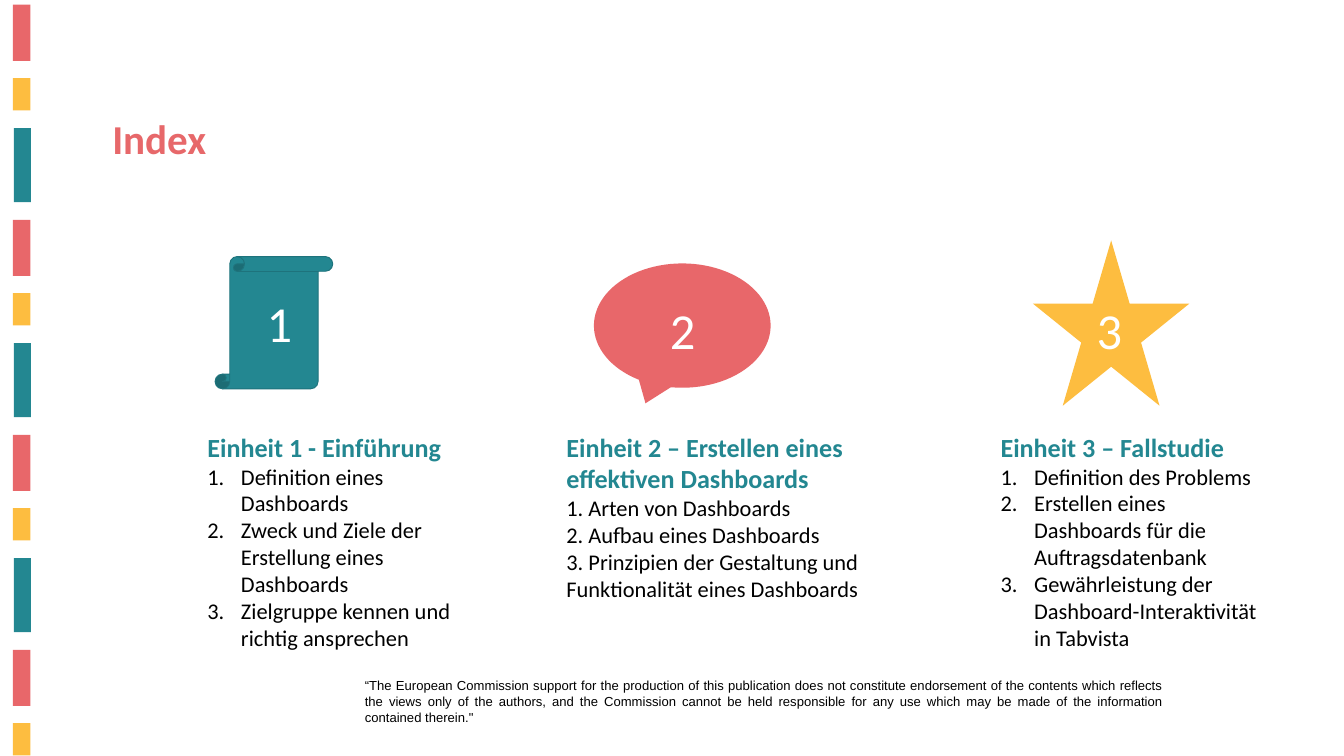
from lxml import etree
from pptx import Presentation
from pptx.dml.color import RGBColor
from pptx.enum.shapes import MSO_SHAPE
from pptx.enum.text import MSO_ANCHOR, MSO_AUTO_SIZE, PP_ALIGN
from pptx.oxml.ns import qn
from pptx.util import Cm, Pt

RECT = MSO_SHAPE.RECTANGLE
SCROLL = MSO_SHAPE.VERTICAL_SCROLL
BUBBLE = MSO_SHAPE.OVAL_CALLOUT
STAR = MSO_SHAPE.STAR_5_POINT
TOP = MSO_ANCHOR.TOP
FIXED = MSO_AUTO_SIZE.NONE
LEFT, JUSTIFY = PP_ALIGN.LEFT, PP_ALIGN.JUSTIFY

COLORS = {
    "red": "E8676A",
    "title": "E7686A",
    "yellow": "FDBD40",
    "teal": "238791",
    "edge": "1E737C",
    "black": "000000",
    "white": "FFFFFF",
}

# Side bars, repeated down the edge: color, left, top, width, height in cm
BARS = [
    ("red", 0.49, 0.18, 0.66, 2.12),
    ("yellow", 0.49, 2.95, 0.66, 1.22),
    ("teal", 0.53, 4.84, 0.64, 2.8),
]
STEP = 8.13
BAR_COUNT = 11

# Icons: kind, fill, line, box, number, number box
ICONS = [
    (SCROLL, "teal", "edge", (8.13, 9.7, 4.45, 5), "1", (9.83, 10.92, 4.01, 2.57)),
    (BUBBLE, "red", None, (22.45, 9.96, 6.68, 4.7), "2", (25.07, 11.2, 2.74, 2.57)),
    (STAR, "yellow", None, (39.04, 9.09, 5.92, 6.25), "3", (41.2, 11.2, 3.81, 2.57)),
]

# Units: box, heading, points, automatic numbers
UNITS = [
    ((7.59, 16.18, 10.92, 9.83), "Einheit 1 - Einführung", [
        "Definition eines Dashboards",
        "Zweck und Ziele der Erstellung eines Dashboards",
        "Zielgruppe kennen und richtig ansprechen",
    ], True),
    ((21.16, 16.18, 12.9, 6.76), "Einheit 2 – Erstellen eines effektiven Dashboards", [
        "1. Arten von Dashboards",
        "2. Aufbau eines Dashboards",
        "3. Prinzipien der Gestaltung und Funktionalität eines Dashboards",
    ], False),
    ((37.57, 16.18, 10.92, 8.64), "Einheit 3 – Fallstudie", [
        "Definition des Problems",
        "Erstellen eines Dashboards für die Auftragsdatenbank",
        "Gewährleistung der Dashboard-Interaktivität in Tabvista",
    ], True),
]

NOTICE = (
    "“The European Commission support for the production of this publication "
    "does not constitute endorsement of the contents which reflects the views "
    "only of the authors, and the Commission cannot be held responsible for any "
    "use which may be made of the information contained therein.\""
)


def color(name):
    return RGBColor.from_string(COLORS[name])


def style(para, size, tint, bold=False, face="Calibri", align=LEFT):
    para.alignment = align
    for run in para.runs:
        font = run.font
        font.name, font.size, font.bold = face, Pt(size), bold
        font.color.rgb = color(tint)


def add_shape(slide, kind, box, fill, line=None):
    shape = slide.shapes.add_shape(kind, *map(Cm, box))
    shape.shadow.inherit = False
    shape.fill.solid()
    shape.fill.fore_color.rgb = color(fill)
    if line:
        shape.line.color.rgb = color(line)
        shape.line.width = Pt(1)
    else:
        shape.line.fill.background()


def add_text(slide, box, text, size, tint, **look):
    frame = slide.shapes.add_textbox(*map(Cm, box)).text_frame
    frame.word_wrap = True
    frame.text = text
    style(frame.paragraphs[0], size, tint, **look)
    return frame


def number(para):
    props = para._p.get_or_add_pPr()
    props.set("marL", str(Cm(1.27)))
    props.set("indent", str(Cm(-1.27)))
    tint = etree.SubElement(props, qn("a:buClr"))
    etree.SubElement(tint, qn("a:srgbClr"), val=COLORS["black"])
    etree.SubElement(props, qn("a:buFont"), typeface="+mj-lt")
    etree.SubElement(props, qn("a:buAutoNum"), type="arabicPeriod")


def add_unit(slide, box, head, points, auto):
    frame = add_text(slide, box, head, 28, "teal", bold=True)
    for point in points:
        para = frame.add_paragraph()
        para.text = point
        if auto:
            number(para)
        style(para, 24, "black")


def add_bars(slide):
    for i in range(BAR_COUNT):
        turn, kind = divmod(i, len(BARS))
        fill, left, top, width, height = BARS[kind]
        add_shape(slide, RECT, (left, top + turn * STEP, width, height), fill)


def set_title(slide, text):
    title = slide.shapes.title
    title.left, title.top = Cm(3.99), Cm(4.17)
    title.width, title.height = Cm(17.2), Cm(2.13)
    frame = title.text_frame
    frame.text = text
    frame.word_wrap = True
    frame.auto_size = FIXED
    frame.vertical_anchor = TOP
    style(frame.paragraphs[0], 44, "title", bold=True)


def main():
    deck = Presentation()
    deck.slide_width, deck.slide_height = Cm(50.8), Cm(28.58)
    slide = deck.slides.add_slide(deck.slide_layouts[5])

    # Frame of the page
    add_bars(slide)
    add_text(slide, (13.54, 25.5, 30.68, 2.06), NOTICE, 14, "black",
             face="Arial", align=JUSTIFY)
    set_title(slide, "Index")

    # Numbered icons
    for kind, fill, line, box, digit, spot in ICONS:
        add_shape(slide, kind, box, fill, line)
        add_text(slide, spot, digit, 54, "white")

    # Contents of the units
    for unit in UNITS:
        add_unit(slide, *unit)

    deck.save("out.pptx")


if __name__ == "__main__":
    main()
